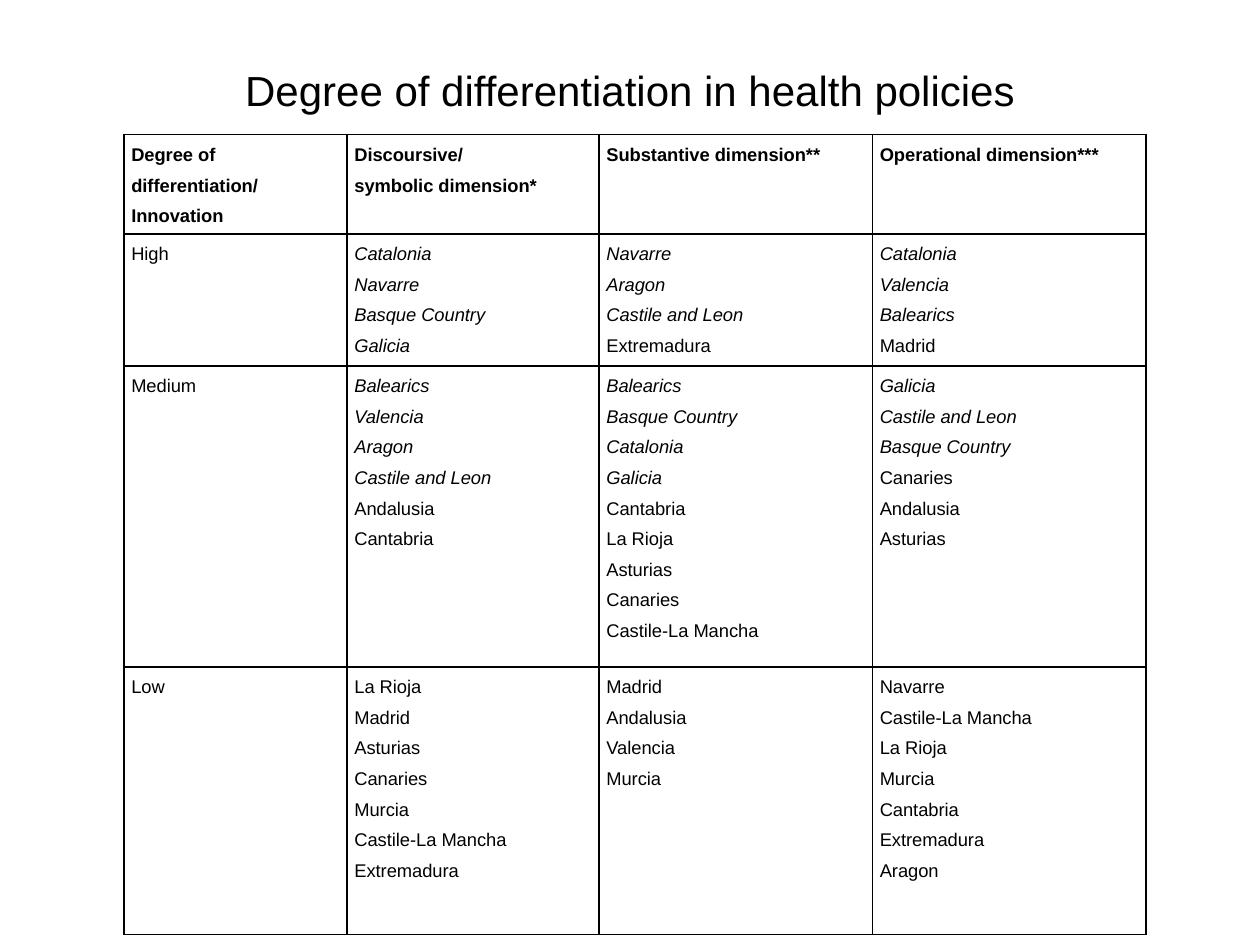
from typing import Any, NamedTuple

from pptx import Presentation
from pptx.dml.color import RGBColor
from pptx.enum.text import MSO_ANCHOR as Anchor, PP_ALIGN as Align
from pptx.oxml import parse_xml
from pptx.oxml.ns import nsdecls
from pptx.util import Pt

BLACK = RGBColor(0, 0, 0)
FONT = "Arial"
COLS = (127.5, 144, 156.25, 156.25)
ROWS = (56, 75.25, 172, 152.75)
INSET = {
    "margin_left": Pt(4.3),
    "margin_right": Pt(4.3),
    "margin_top": 0,
    "margin_bottom": 0,
    "vertical_anchor": Anchor.TOP,
}
PLAIN = {"first_row": False, "horz_banding": False}


class Entry(NamedTuple):
    """Lines of one cell, the first `slant` of them in italics."""
    text: str
    slant: int = 0


GRID = (
    (
        Entry("Degree of differentiation/\nInnovation"),
        Entry("Discoursive/\nsymbolic dimension*"),
        Entry("Substantive dimension**"),
        Entry("Operational dimension***"),
    ),
    (
        Entry("High"),
        Entry("Catalonia\nNavarre\nBasque Country\nGalicia", 4),
        Entry("Navarre\nAragon\nCastile and Leon\nExtremadura", 3),
        Entry("Catalonia\nValencia\nBalearics\nMadrid", 3),
    ),
    (
        Entry("Medium"),
        Entry("Balearics\nValencia\nAragon\nCastile and Leon\nAndalusia\nCantabria", 4),
        Entry("Balearics\nBasque Country\nCatalonia\nGalicia\nCantabria\nLa Rioja\n"
              "Asturias\nCanaries\nCastile-La Mancha", 4),
        Entry("Galicia\nCastile and Leon\nBasque Country\nCanaries\nAndalusia\nAsturias", 3),
    ),
    (
        Entry("Low"),
        Entry("La Rioja\nMadrid\nAsturias\nCanaries\nMurcia\nCastile-La Mancha\nExtremadura"),
        Entry("Madrid\nAndalusia\nValencia\nMurcia"),
        Entry("Navarre\nCastile-La Mancha\nLa Rioja\nMurcia\nCantabria\nExtremadura\nAragon"),
    ),
)


def apply(item: Any, form: dict[str, Any]) -> None:
    for name, value in form.items():
        setattr(item, name, value)


def style(font: Any, size: float, bold: bool = False, italic: bool = False) -> None:
    apply(font, {"name": FONT, "size": Pt(size), "bold": bold, "italic": italic})
    font.color.rgb = BLACK


def frame(cell: Any) -> None:
    """Give all four sides of the cell a thin black line."""
    props = cell._tc.get_or_add_tcPr()
    for side in "LRTB":
        props.append(parse_xml(
            f'<a:ln{side} {nsdecls("a")} w="{Pt(1)}"><a:solidFill>'
            f'<a:srgbClr val="{BLACK}"/></a:solidFill></a:ln{side}>'
        ))


def write(cell: Any, entry: Entry, head: bool) -> None:
    apply(cell, INSET)
    frame(cell)
    cell.fill.background()
    cell.text = entry.text
    for i, para in enumerate(cell.text_frame.paragraphs):
        para.line_spacing = 1.5
        style(para.runs[0].font, 10.5, head, i < entry.slant)


def add_title(slide: Any, text: str) -> None:
    box = slide.shapes.add_textbox(Pt(54), Pt(26), Pt(612), Pt(51)).text_frame
    apply(box, {"word_wrap": True, "vertical_anchor": Anchor.MIDDLE, "text": text})
    para = box.paragraphs[0]
    para.alignment = Align.CENTER
    style(para.runs[0].font, 24)


def add_grid(slide: Any) -> None:
    table = slide.shapes.add_table(
        len(ROWS), len(COLS), Pt(70.75), Pt(77), Pt(sum(COLS)), Pt(sum(ROWS))
    ).table
    apply(table, PLAIN)
    for col, width in zip(table.columns, COLS):
        col.width = Pt(width)
    for r, (row, height) in enumerate(zip(table.rows, ROWS)):
        row.height = Pt(height)
        for cell, entry in zip(row.cells, GRID[r]):
            write(cell, entry, r == 0)


def main() -> None:
    deck = Presentation()
    apply(deck, {"slide_width": Pt(720), "slide_height": Pt(540)})
    slide = deck.slides.add_slide(deck.slide_layouts[6])
    add_title(slide, "Degree of differentiation in health policies")
    add_grid(slide)
    deck.save("out.pptx")


if __name__ == "__main__":
    main()
